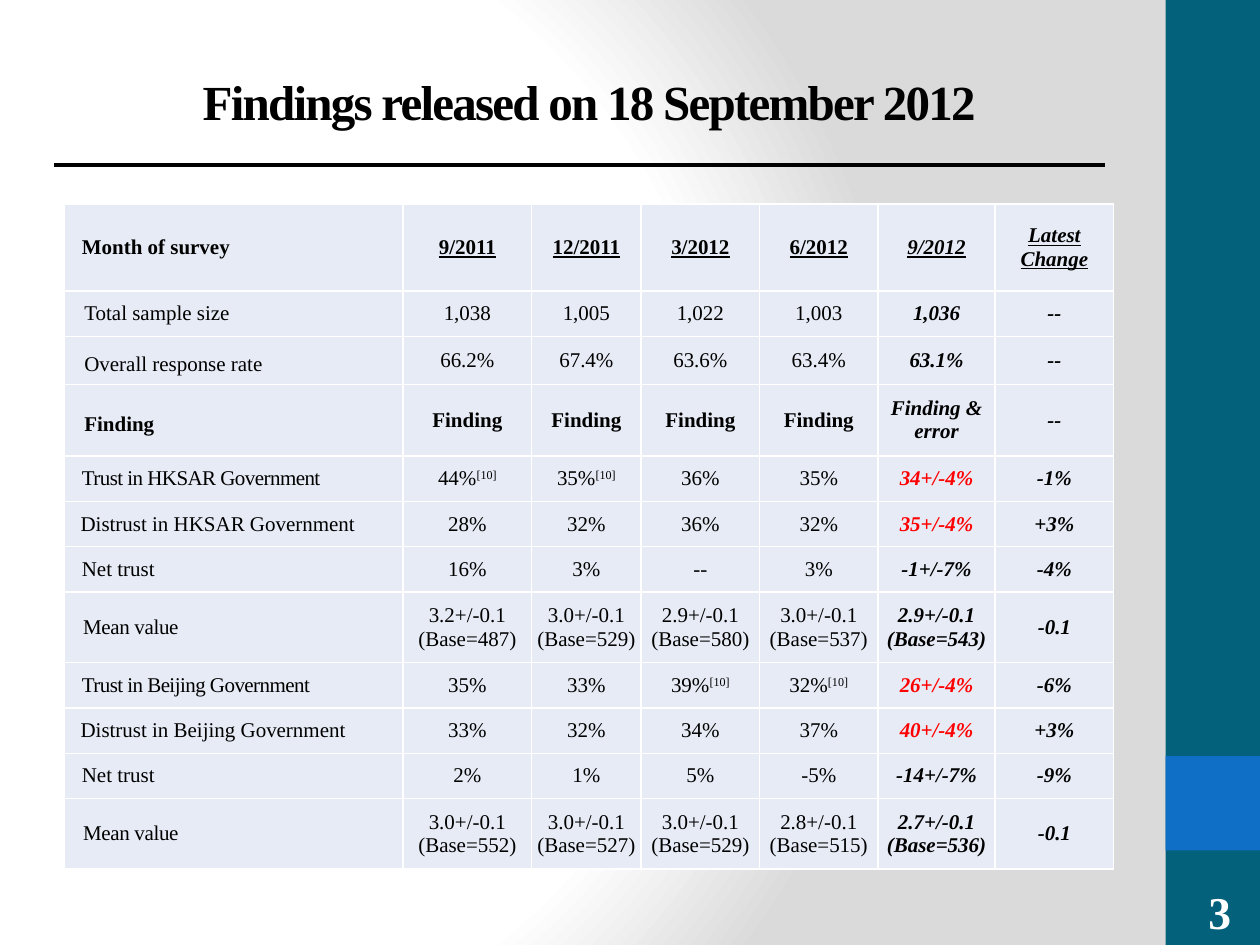
from lxml.etree import SubElement
from pptx import Presentation
from pptx.dml.color import RGBColor
from pptx.enum.shapes import MSO_CONNECTOR, MSO_SHAPE
from pptx.enum.text import MSO_ANCHOR, PP_ALIGN
from pptx.oxml import parse_xml
from pptx.oxml.ns import nsdecls, qn
from pptx.util import Inches, Pt

BLACK = RGBColor(0x00, 0x00, 0x00)
WHITE = RGBColor(0xFF, 0xFF, 0xFF)
RED = RGBColor(0xFF, 0x00, 0x00)
TEAL = RGBColor(0x04, 0x61, 0x7B)
BLUE = RGBColor(0x0F, 0x6F, 0xC6)
PALE = RGBColor(0xE7, 0xEB, 0xF5)
FONT = "Times New Roman"

COL_WIDTHS = [2.69, 1.02, 0.87, 0.94, 0.94, 0.93, 0.94]
HEADER, SINGLE, RATE, FINDING, DOUBLE = 0.69, 0.36, 0.38, 0.57, 0.56
LATEST, CHANGE = 5, 6

# Label styles: left margin, first-line indent (inches), letter spacing (points)
PLAIN, HANGING, TIGHT = (0, 0.12, 0), (0.26, -0.12, 0), (0, 0.12, -0.3)
DISTRUST, MEAN = (0, 0.11, 0), (0.29, -0.16, -0.2)

# Row height, label style, cells
ROWS = [
    (HEADER, PLAIN, ["Month of survey", "9/2011", "12/2011", "3/2012", "6/2012",
                     "9/2012", "Latest Change"]),
    (SINGLE, HANGING, ["Total sample size", "1,038", "1,005", "1,022", "1,003",
                       "1,036", "--"]),
    (RATE, HANGING, ["Overall response rate", "66.2%", "67.4%", "63.6%", "63.4%",
                     "63.1%", "--"]),
    (FINDING, HANGING, ["Finding", "Finding", "Finding", "Finding", "Finding",
                        "Finding & error", "--"]),
    (SINGLE, TIGHT, ["Trust in HKSAR Government", "44%[10]", "35%[10]", "36%", "35%",
                     "34+/-4%", "-1%"]),
    (SINGLE, DISTRUST, ["Distrust in HKSAR Government", "28%", "32%", "36%", "32%",
                        "35+/-4%", "+3%"]),
    (SINGLE, PLAIN, ["Net trust", "16%", "3%", "--", "3%", "-1+/-7%", "-4%"]),
    (DOUBLE, MEAN, ["Mean value", "3.2+/-0.1\n(Base=487)", "3.0+/-0.1\n(Base=529)",
                    "2.9+/-0.1\n(Base=580)", "3.0+/-0.1\n(Base=537)",
                    "2.9+/-0.1\n(Base=543)", "-0.1"]),
    (SINGLE, TIGHT, ["Trust in Beijing Government", "35%", "33%", "39%[10]", "32%[10]",
                     "26+/-4%", "-6%"]),
    (SINGLE, DISTRUST, ["Distrust in Beijing Government", "33%", "32%", "34%", "37%",
                        "40+/-4%", "+3%"]),
    (SINGLE, PLAIN, ["Net trust", "2%", "1%", "5%", "-5%", "-14+/-7%", "-9%"]),
    (DOUBLE, MEAN, ["Mean value", "3.0+/-0.1\n(Base=552)", "3.0+/-0.1\n(Base=527)",
                    "3.0+/-0.1\n(Base=529)", "2.8+/-0.1\n(Base=515)",
                    "2.7+/-0.1\n(Base=536)", "-0.1"]),
]


def format_run(r, size, color=BLACK, bold=True, spacing=0):
    r.font.name = FONT
    r.font.size = Pt(size)
    r.font.bold = bold
    r.font.color.rgb = color
    if spacing:
        r._r.get_or_add_rPr().set("spc", str(round(spacing * 100)))


def add_borders(cell):
    """Draw 1 pt white lines on all four sides; call before filling the cell."""
    for side in ("lnL", "lnR", "lnT", "lnB"):
        ln = SubElement(cell._tc.get_or_add_tcPr(), qn(f"a:{side}"), w=str(Pt(1)))
        SubElement(SubElement(ln, qn("a:solidFill")), qn("a:srgbClr"), val=str(WHITE))


prs = Presentation()
prs.slide_width, prs.slide_height = Inches(10), Inches(7.5)
W, H = prs.slide_width, prs.slide_height
s = prs.slides.add_slide(prs.slide_layouts[6])

# Background: circular gradient, white to grey
fill = s.background.fill
fill.gradient()
grad = s.background._cSld.find(".//" + qn("a:gradFill"))
grad.getparent().replace(grad, parse_xml(
    f'<a:gradFill {nsdecls("a")} rotWithShape="1"><a:gsLst>'
    '<a:gs pos="0"><a:srgbClr val="FFFFFF"/></a:gs>'
    '<a:gs pos="75000"><a:srgbClr val="FFFFFF"/></a:gs>'
    '<a:gs pos="100000"><a:srgbClr val="DADADA"/></a:gs></a:gsLst>'
    '<a:path path="circle"><a:fillToRect l="20000" t="50000" r="100000" b="50000"/>'
    '</a:path></a:gradFill>'))

# Side band with its accent square
band = round(W * 0.075)
for top, height, color in [(0, H, TEAL), (round(H * 0.8), band, BLUE)]:
    sp = s.shapes.add_shape(MSO_SHAPE.RECTANGLE, W - band, top, band, height)
    sp.shadow.inherit = False
    sp.fill.solid()
    sp.fill.fore_color.rgb = color
    sp.line.fill.background()

# Rule under the title
rule_y = round(H * 0.175)
rule = s.shapes.add_connector(MSO_CONNECTOR.STRAIGHT, round(W * 0.043), rule_y,
                              round(W * 0.877), rule_y)
rule.line.color.rgb = BLACK
rule.line.width = Pt(2.25)
SubElement(rule._element.spPr, qn("a:effectLst"))

# Title and slide number
left, width = round(W * 0.051), round(W * 0.833)
for text, box, anchor, align, size, color, spacing in [
    ("Findings released on 18 September 2012", (left, round(H * 0.07), width, round(H * 0.074)),
     MSO_ANCHOR.MIDDLE, PP_ALIGN.CENTER, 28, BLACK, -1),
    ("3", (round(W * 0.936), round(H * 0.93), round(W * 0.064), round(H * 0.07)),
     MSO_ANCHOR.BOTTOM, PP_ALIGN.CENTER, 26, WHITE, 0),
]:
    tf = s.shapes.add_textbox(*box).text_frame
    tf.word_wrap = True
    tf.vertical_anchor = anchor
    tf.text = text
    p = tf.paragraphs[0]
    p.alignment = align
    format_run(p.runs[0], size, color, spacing=spacing)

# Survey table
table = s.shapes.add_table(len(ROWS), len(COL_WIDTHS), left, round(H * 0.216), width,
                           Inches(sum(row[0] for row in ROWS))).table
table.first_row = table.horz_banding = False
for column, col_width in zip(table.columns, COL_WIDTHS):
    column.width = Inches(col_width)

for i, (height, (margin, indent, spacing), texts) in enumerate(ROWS):
    table.rows[i].height = Inches(height)
    is_header = height == HEADER
    for j, text in enumerate(texts):
        cell = table.cell(i, j)
        add_borders(cell)
        cell.fill.solid()
        cell.fill.fore_color.rgb = PALE
        cell.vertical_anchor = MSO_ANCHOR.MIDDLE
        cell.margin_left = cell.margin_right = Inches(0.02)
        cell.margin_top = cell.margin_bottom = 0
        value, _, note = text.partition("[")
        cell.text_frame.text = value
        if note:
            cell.text_frame.paragraphs[0].add_run().text = "[" + note
        is_trust = texts[0].startswith(("Trust", "Distrust"))
        for p in cell.text_frame.paragraphs:
            p.alignment = PP_ALIGN.CENTER if j else PP_ALIGN.LEFT
            if j == 0:
                pPr = p._p.get_or_add_pPr()
                pPr.set("marL", str(Inches(margin)))
                pPr.set("indent", str(Inches(indent)))
                if height in (RATE, FINDING):
                    p.line_spacing = Pt(18)
            for r in p.runs:
                format_run(r, 12, RED if is_trust and j == LATEST else BLACK,
                           bold=height in (HEADER, FINDING) or j >= LATEST,
                           spacing=0 if j else spacing)
                r.font.italic = j >= LATEST
                r.font.underline = is_header and j > 0
                if r.text.startswith("["):
                    r._r.get_or_add_rPr().set("baseline", "30000")

prs.save("out.pptx")
